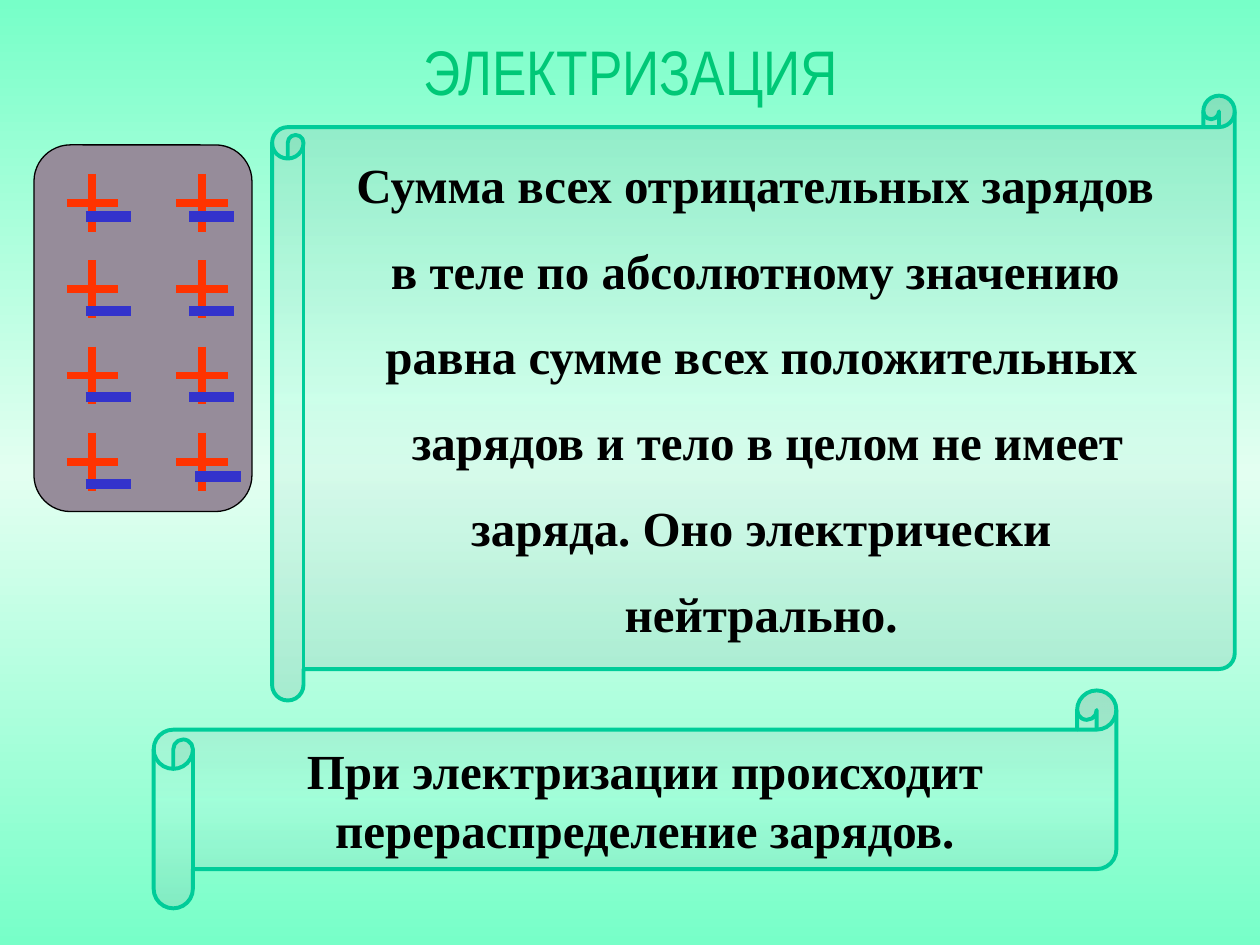
from lxml.etree import SubElement
from pptx import Presentation
from pptx.dml.color import RGBColor
from pptx.enum.shapes import MSO_CONNECTOR, MSO_SHAPE
from pptx.enum.text import MSO_ANCHOR, PP_ALIGN
from pptx.oxml.ns import qn
from pptx.util import Inches, Pt

COLORS = {
    "mint": "77FFC8", "pale": "E3FFF1",
    "scroll_edge": "87B6A7", "scroll_middle": "BDFFE9", "scroll_line": "00CC99",
    "body": "968C9A", "plus": "FF3300", "minus": "3333CC",
    "title": "00C877", "black": "000000",
}


def rgb(name):
    return RGBColor.from_string(COLORS[name])


class SlideBuilder:
    def __init__(self, slide):
        self.slide = slide
        self.shapes = slide.shapes
        self.font = "Times New Roman"

    def gradient(self, fill, owner, edge, middle, opacity=100):
        """Fill with a vertical gradient running edge, middle, edge."""
        fill.gradient()
        fill.gradient_angle = 270
        stops = owner.xpath(".//a:gsLst")[0]
        for stop in list(stops):
            stops.remove(stop)
        for position, name in ((0, edge), (50, middle), (100, edge)):
            stop = SubElement(stops, qn("a:gs"), pos=str(position * 1000))
            color = SubElement(stop, qn("a:srgbClr"), val=COLORS[name])
            if opacity < 100:
                SubElement(color, qn("a:alpha"), val=str(opacity * 1000))

    def background(self, edge, middle):
        self.gradient(self.slide.background.fill, self.slide.element, edge, middle)

    def add_lines(self, frame, lines, size, color, font, bold=False, space_before=0):
        frame.word_wrap = False
        for index, line in enumerate(lines):
            paragraph = frame.add_paragraph() if index else frame.paragraphs[0]
            paragraph.alignment = PP_ALIGN.CENTER
            paragraph.space_before = Pt(space_before)
            run = paragraph.add_run()
            run.text = line
            run.font.name = font
            run.font.size = Pt(size)
            run.font.bold = bold
            run.font.color.rgb = rgb(color)

    def title(self, text, left, top, width, height):
        box = self.shapes.add_textbox(
            Inches(left), Inches(top), Inches(width), Inches(height))
        self.add_lines(box.text_frame, [text], 36, "title", "Arial Narrow")

    def shape(self, kind, left, top, width, height, adjustment, line, line_width):
        shape = self.shapes.add_shape(
            kind, Inches(left), Inches(top), Inches(width), Inches(height))
        shape.shadow.inherit = False
        shape.adjustments[0] = adjustment
        shape.line.color.rgb = rgb(line)
        shape.line.width = Pt(line_width)
        return shape

    def scroll(self, lines, left, top, width, height, adjustment, space_before=0):
        shape = self.shape(MSO_SHAPE.HORIZONTAL_SCROLL, left, top, width, height,
                           adjustment, "scroll_line", 2.25)
        self.gradient(shape.fill, shape.element.spPr,
                      "scroll_edge", "scroll_middle", opacity=26)
        shape.text_frame.vertical_anchor = MSO_ANCHOR.MIDDLE
        self.add_lines(shape.text_frame, lines, 28, "black", self.font,
                       bold=True, space_before=space_before)

    def line(self, x1, y1, x2, y2, color, width):
        line = self.shapes.add_connector(
            MSO_CONNECTOR.STRAIGHT, Inches(x1), Inches(y1), Inches(x2), Inches(y2))
        line.line.color.rgb = rgb(color)
        line.line.width = Pt(width)
        SubElement(line.element.spPr, qn("a:effectLst"))

    def plus(self, x, y):
        self.line(x, y - 0.23, x, y + 0.23, "plus", 4.5)
        self.line(x - 0.2, y, x + 0.21, y, "plus", 4.5)

    def minus(self, left, y):
        self.line(left, y, left + 0.36, y, "minus", 6)

    def charged_body(self):
        """Group a body with a grid of positive charges and a negative one by each."""
        slide_shapes = self.shapes
        self.shapes = slide_shapes.add_group_shape().shapes
        body = self.shape(MSO_SHAPE.ROUNDED_RECTANGLE, 0.27, 1.15, 1.73, 2.91,
                          0.167, "black", 0.75)
        body.fill.solid()
        body.fill.fore_color.rgb = rgb("body")
        for row in range(4):
            for x in (0.73, 1.6):
                self.plus(x, 1.61 + row * 0.685)
        left_column = [(0.68, y) for y in (1.72, 2.47, 3.15, 3.84)]
        right_column = [(1.5, 1.72), (1.5, 2.47), (1.5, 3.15), (1.55, 3.78)]
        for left, y in left_column + right_column:
            self.minus(left, y)
        self.shapes = slide_shapes


def main():
    presentation = Presentation()
    presentation.slide_width = Inches(10)
    presentation.slide_height = Inches(7.5)
    slide = presentation.slides.add_slide(presentation.slide_layouts[6])

    builder = SlideBuilder(slide)
    builder.background("mint", "pale")
    builder.scroll(
        ["При электризации происходит", "перераспределение зарядов."],
        1.22, 5.48, 7.64, 1.73, 0.18)
    builder.scroll(
        ["Сумма всех отрицательных зарядов ",
         "в теле по абсолютному значению ",
         "равна сумме всех положительных",
         " зарядов и тело в целом не имеет",
         " заряда. Оно электрически ",
         "нейтрально."],
        2.16, 0.76, 7.64, 4.8, 0.052, space_before=15.4)
    builder.charged_body()
    builder.title("ЭЛЕКТРИЗАЦИЯ", 2.64, 0.21, 4.73, 0.47)

    presentation.save("out.pptx")


if __name__ == "__main__":
    main()
